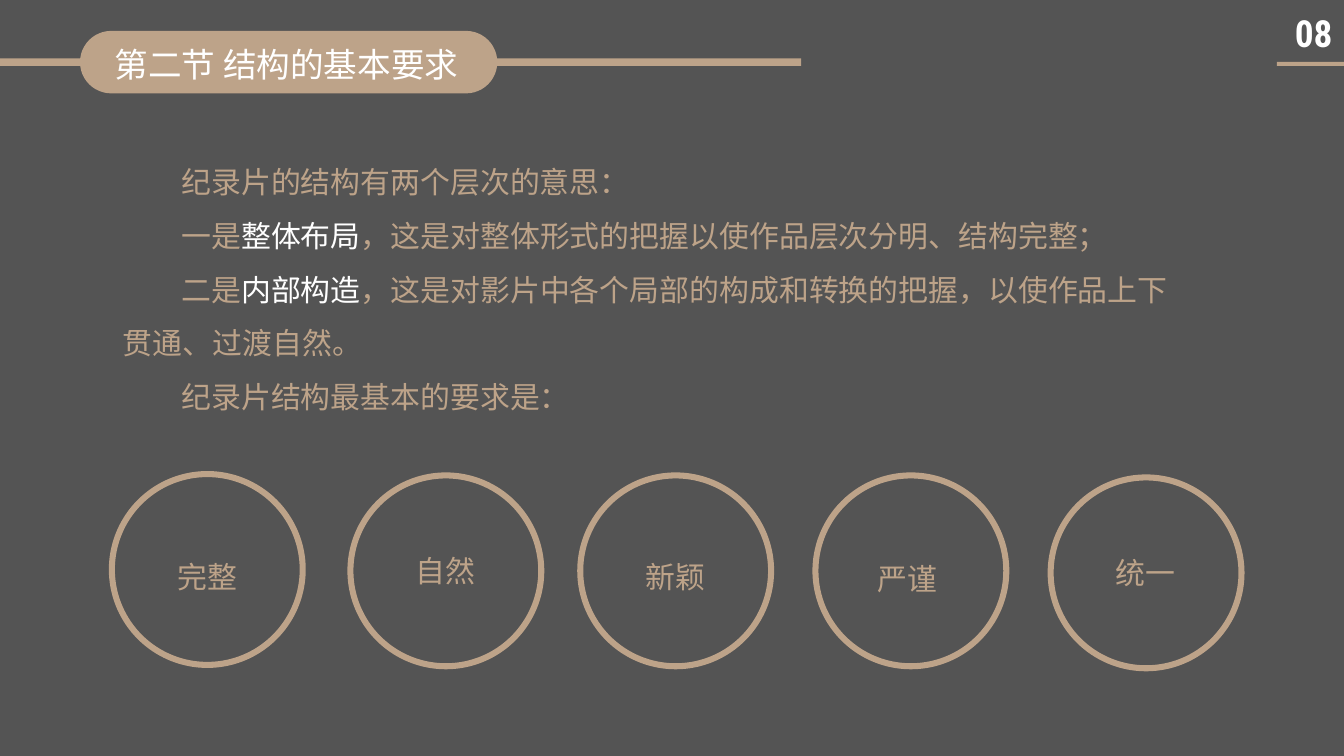
from typing import NamedTuple

from lxml.etree import SubElement
from pptx import Presentation
from pptx.dml.color import RGBColor
from pptx.enum.shapes import MSO_SHAPE
from pptx.enum.text import MSO_AUTO_SIZE, PP_ALIGN
from pptx.oxml.ns import qn
from pptx.util import Inches, Pt

TAN, WHITE, GREY = "BDA389", "FFFFFF", "545454"
CJK, LATIN = "Noto Sans CJK SC", "Roboto Condensed"
INDENT = 0.87
RING_SIZE, RING_BAND = 2.93, 0.09


class Box(NamedTuple):
    left: float
    top: float
    width: float
    height: float


class Run(NamedTuple):
    text: str
    color: str = TAN


class Ring(NamedTuple):
    label: str
    left: float
    top: float
    label_box: Box
    spacing: float = 1.0
    indent: float = 0


RINGS = [
    Ring("完整", 1.62, 7.01, Box(2.54, 7.99, 1.1, 0.78), 1.5),
    Ring("自然", 5.17, 7.03, Box(6.09, 8.18, 1.1, 0.64)),
    Ring("新颖", 8.59, 7.03, Box(9.51, 7.99, 1.1, 0.78), 1.5),
    Ring("严谨", 12.09, 7.03, Box(12.09, 8.03, 1.97, 0.78), 1.5, INDENT),
    Ring("统一", 15.59, 7.06, Box(16.5, 8.2, 1.1, 0.64)),
]

BODY = [
    [Run("纪录片的结构有两个层次的意思：")],
    [
        Run("一是"),
        Run("整体布局", WHITE),
        Run("，这是对整体形式的把握以使作品层次分明、结构完整；"),
    ],
    [
        Run("二是"),
        Run("内部构造", WHITE),
        Run("，这是对影片中各个局部的构成和转换的把握，以使作品上下贯通、过渡自然。"),
    ],
    [Run("纪录片结构最基本的要求是：")],
]


def rgb(color: str) -> RGBColor:
    return RGBColor.from_string(color)


def add_shape(s, kind: MSO_SHAPE, box: Box, adjustment: float | None = None) -> None:
    sp = s.shapes.add_shape(kind, *map(Inches, box))
    sp.shadow.inherit = False
    sp.fill.solid()
    sp.fill.fore_color.rgb = rgb(TAN)
    sp.line.fill.background()
    if adjustment is not None:
        sp.adjustments[0] = adjustment


def add_text(s, box: Box, paragraphs: list[list[Run]], size: int = 32,
             font: str = CJK, bold: bool = False, spacing: float = 1.0,
             indent: float = 0, wrap: bool = True, inset: bool = True) -> None:
    tf = s.shapes.add_textbox(*map(Inches, box)).text_frame
    frame_format = {"word_wrap": wrap, "auto_size": MSO_AUTO_SIZE.SHAPE_TO_FIT_TEXT}
    if not inset:
        frame_format |= {f"margin_{side}": 0 for side in ("left", "top", "right", "bottom")}
    for name, value in frame_format.items():
        setattr(tf, name, value)
    for i, runs in enumerate(paragraphs):
        p = tf.add_paragraph() if i else tf.paragraphs[0]
        p.alignment = PP_ALIGN.LEFT
        p.line_spacing = spacing
        if indent:
            p._p.get_or_add_pPr().set("indent", str(Inches(indent)))
        for run in runs:
            r = p.add_run()
            r.text = run.text
            for name, value in {"name": font, "size": Pt(size), "bold": bold}.items():
                setattr(r.font, name, value)
            r.font.color.rgb = rgb(run.color)
            SubElement(r._r.get_or_add_rPr(), qn("a:ea")).set("typeface", font)


def add_ring(s, ring: Ring) -> None:
    box = Box(ring.left, ring.top, RING_SIZE, RING_SIZE)
    add_shape(s, MSO_SHAPE.DONUT, box, RING_BAND / RING_SIZE)
    add_text(s, ring.label_box, [[Run(ring.label)]], spacing=ring.spacing,
             indent=ring.indent, wrap=False)


def main() -> None:
    prs = Presentation()
    prs.slide_width, prs.slide_height = Inches(20), Inches(11.25)
    s = prs.slides.add_slide(prs.slide_layouts[6])
    s.background.fill.solid()
    s.background.fill.fore_color.rgb = rgb(GREY)

    add_text(s, Box(1.83, 2.17, 15.67, 4.04), BODY, spacing=1.5, indent=INDENT, inset=False)
    add_shape(s, MSO_SHAPE.RECTANGLE, Box(19, 0.92, 1, 0.06))
    add_text(s, Box(19.17, 0.1, 0.81, 0.77), [[Run("08", WHITE)]], 40, LATIN, bold=True)
    add_shape(s, MSO_SHAPE.RECTANGLE, Box(-0.03, 0.87, 11.95, 0.11))
    add_shape(s, MSO_SHAPE.ROUNDED_RECTANGLE, Box(1.19, 0.46, 6.21, 0.93), 0.5)
    add_text(s, Box(1.61, 0.6, 6.56, 0.71), [[Run("第二节 结构的基本要求", WHITE)]], 36)
    for ring in RINGS:
        add_ring(s, ring)

    prs.save("out.pptx")


if __name__ == "__main__":
    main()
